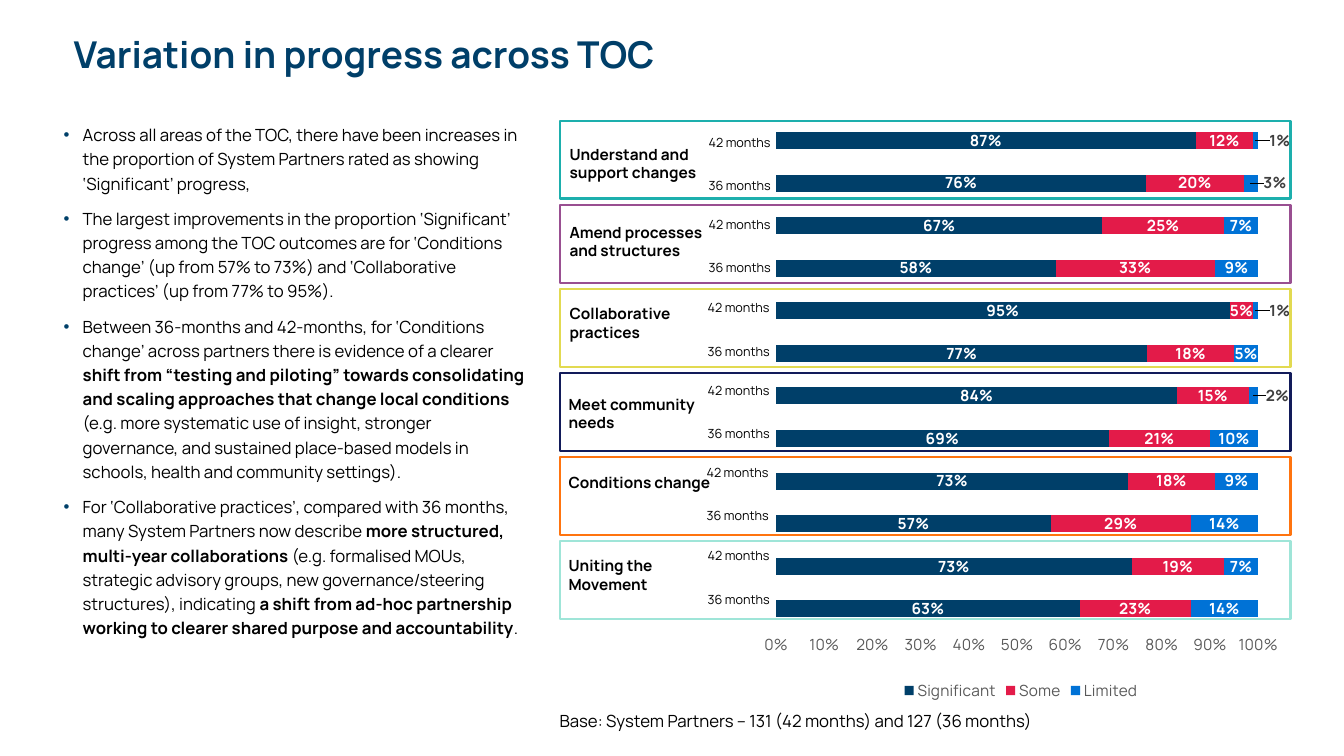
"""Build the slide on variation in progress across the TOC outcomes."""
from dataclasses import dataclass

from lxml import etree
from pptx import Presentation
from pptx import util as u
from pptx.chart.data import CategoryChartData
from pptx.dml.color import RGBColor
from pptx.enum import chart as ch
from pptx.enum import shapes, text
from pptx.oxml.ns import qn


@dataclass(frozen=True)
class Theme:
    """Colours and type sizes of the slide."""
    font: str = "Manrope"
    navy: str = "003F69"
    red: str = "E31B49"
    blue: str = "0072D6"
    bullet: str = "004069"
    black: str = "000000"
    white: str = "FFFFFF"
    axis: str = "595959"
    outside: str = "404040"
    title: float = 26.4
    body: float = 12
    label: float = 11
    month: float = 9


@dataclass(frozen=True)
class Outcome:
    """One framed outcome with its two survey waves."""
    name: str
    colour: str
    left: float
    label_top: float
    month_left: float
    month_top: float
    months_42: tuple[float, float, float]
    months_36: tuple[float, float, float]


THEME = Theme()
OUTCOMES = [
    Outcome("Understand and support changes", "1DAFAD", 5.55, 1.39, 6.93, 1.29,
            (0.87, 0.12, 0.01), (0.76, 0.20, 0.03)),
    Outcome("Amend processes and structures", "994F91", 5.55, 2.16, 6.93, 2.10,
            (0.67, 0.25, 0.07), (0.58, 0.33, 0.09)),
    Outcome("Collaborative practices", "E2DA51", 5.55, 2.97, 6.92, 2.93,
            (0.95, 0.05, 0.01), (0.77, 0.18, 0.05)),
    Outcome("Meet community needs", "121B5A", 5.54, 3.87, 6.92, 3.75,
            (0.84, 0.15, 0.02), (0.69, 0.21, 0.10)),
    Outcome("Conditions change", "FF740F", 5.54, 4.64, 6.91, 4.56,
            (0.73, 0.18, 0.09), (0.57, 0.29, 0.14)),
    Outcome("Uniting the Movement", "9FE5D8", 5.54, 5.47, 6.92, 5.39,
            (0.73, 0.19, 0.07), (0.63, 0.23, 0.14)),
]
RATINGS = {"Significant": THEME.navy, "Some": THEME.red, "Limited": THEME.blue}
FINDINGS = [
    [("Across all areas of the TOC, there have been increases in the proportion of "
      "System Partners rated as showing ‘Significant’ progress,", False)],
    [("The largest improvements in the proportion ‘Significant’ progress among the TOC "
      "outcomes are for ‘Conditions change’ (up from 57% to 73%) and ‘Collaborative "
      "practices’ (up from 77% to 95%).", False)],
    [("Between 36-months and 42-months, for ‘Conditions change’ across partners there is "
      "evidence of a clearer ", False),
     ("shift from “testing and piloting” towards consolidating and scaling approaches "
      "that change local conditions ", True),
     ("(e.g. more systematic use of insight, stronger governance, and sustained "
      "place‑based models in schools, health and community settings).", False)],
    [("For ‘Collaborative practices’, compared with 36 months, many System Partners now "
      "describe ", False),
     ("more structured, multi‑year collaborations ", True),
     ("(e.g. formalised MOUs, strategic advisory groups, new governance/steering "
      "structures), indicating ", False),
     ("a shift from ad‑hoc partnership working to clearer shared purpose and "
      "accountability", True),
     (".", False)],
]


def style(font, size: float, colour: str, bold: bool = False) -> None:
    """Apply the slide font with a size, colour and weight."""
    font.name, font.size, font.bold = THEME.font, u.Pt(size), bold
    font.color.rgb = RGBColor.from_string(colour)


def place(shape, left: float, top: float, width: float, height: float) -> None:
    """Move and size a shape in inches."""
    shape.left, shape.top = u.Inches(left), u.Inches(top)
    shape.width, shape.height = u.Inches(width), u.Inches(height)


def clear_insets(frame) -> None:
    """Remove the inner margins of a text frame."""
    frame.margin_left = frame.margin_right = frame.margin_top = frame.margin_bottom = 0


def add_text(parent, words: str, box: tuple[float, float, float, float], size: float,
             bold: bool = False):
    """Add a wrapping text box and return its frame."""
    frame = parent.add_textbox(*map(u.Inches, box)).text_frame
    frame.word_wrap = True
    frame.auto_size = text.MSO_AUTO_SIZE.SHAPE_TO_FIT_TEXT
    frame.text = words
    style(frame.paragraphs[0].runs[0].font, size, THEME.black, bold)
    return frame


def fill_title(title) -> None:
    """Write and format the slide title."""
    place(title, 0.63, 0.28, 9.4, 0.56)
    frame = title.text_frame
    frame.text = "Variation in progress across TOC"
    frame.auto_size = text.MSO_AUTO_SIZE.NONE
    frame.vertical_anchor = text.MSO_ANCHOR.MIDDLE
    heading = frame.paragraphs[0]
    heading.alignment, heading.line_spacing = text.PP_ALIGN.LEFT, 0.9
    style(heading.runs[0].font, THEME.title, THEME.navy, True)


def fill_findings(body) -> None:
    """Write the bulleted findings."""
    place(body, 0.63, 1.2, 4.61, 5.79)
    frame = body.text_frame
    clear_insets(frame)
    frame.auto_size = text.MSO_AUTO_SIZE.NONE
    for index, pieces in enumerate(FINDINGS):
        finding = frame.paragraphs[0] if index == 0 else frame.add_paragraph()
        props = finding._p.get_or_add_pPr()
        props.set("marL", str(u.Inches(0.19)))
        props.set("indent", str(u.Inches(-0.19)))
        bullet_colour = etree.SubElement(props, qn("a:buClr"))
        etree.SubElement(bullet_colour, qn("a:srgbClr"), val=THEME.bullet)
        etree.SubElement(props, qn("a:buFont"), typeface="Arial")
        etree.SubElement(props, qn("a:buChar"), char="•")
        finding.line_spacing = 1.2
        finding.space_before, finding.space_after = u.Pt(0), u.Pt(8)
        for words, bold in pieces:
            run = finding.add_run()
            run.text = words
            style(run.font, THEME.body, THEME.black, bold)


def add_layout(parent, position: int, **settings) -> None:
    """Insert a manual chart layout at a child position."""
    layout = etree.Element(qn("c:layout"))
    manual = etree.SubElement(layout, qn("c:manualLayout"))
    for tag, value in settings.items():
        etree.SubElement(manual, qn(f"c:{tag}"), val=str(value))
    parent.insert(position, layout)


def add_progress_chart(slide) -> None:
    """Add the stacked bars for all outcomes and waves."""
    waves = [wave for outcome in reversed(OUTCOMES)
             for wave in (outcome.months_36, outcome.months_42)]
    data = CategoryChartData(number_format="0%")
    data.categories = [str(number) for number in range(1, len(waves) + 1)]
    for name, values in zip(RATINGS, zip(*waves)):
        data.add_series(name, values)
    chart = slide.shapes.add_chart(
        ch.XL_CHART_TYPE.BAR_STACKED_100,
        *map(u.Inches, (7.47, 1.07, 5.33, 5.93)), data).chart
    style(chart.font, THEME.label, THEME.black)
    chart.has_title = False
    chart.has_legend = True
    chart.legend.position = ch.XL_LEGEND_POSITION.BOTTOM
    chart.legend.include_in_layout = False
    style(chart.legend.font, THEME.label, THEME.axis)
    chart.category_axis.visible = False
    scale = chart.value_axis
    scale.minimum_scale, scale.maximum_scale, scale.major_unit = 0, 1, 0.1
    scale.has_major_gridlines = False
    scale.major_tick_mark = ch.XL_TICK_MARK.NONE
    scale.format.line.fill.background()
    scale.tick_labels.number_format = "0%"
    scale.tick_labels.number_format_is_linked = False
    style(scale.tick_labels.font, THEME.label, THEME.axis)
    plot = chart.plots[0]
    plot.gap_width, plot.overlap, plot.vary_by_categories = 150, 100, False
    area = chart._chartSpace.chart.plotArea
    for automatic in area.findall(qn("c:layout")):
        area.remove(automatic)
    add_layout(area, 0, layoutTarget="inner", xMode="edge", yMode="edge",
               x=0.043, y=0.019, w=0.9, h=0.855)
    for series, colour in zip(plot.series, RATINGS.values()):
        series.format.fill.solid()
        series.format.fill.fore_color.rgb = RGBColor.from_string(colour)
        labels = series.data_labels
        labels.show_value = True
        labels.number_format, labels.number_format_is_linked = "0%", False
        labels.position = ch.XL_LABEL_POSITION.CENTER
        style(labels.font, THEME.label, THEME.white, True)
    limited = plot.series[-1]
    for index, value in enumerate(limited.values):
        if value < 0.05:
            label = limited.points[index].data_label
            style(label.font, THEME.label, THEME.outside, True)
            label.position = ch.XL_LABEL_POSITION.CENTER
            node = limited._element.xpath(f'.//c:dLbl[c:idx/@val="{index}"]')[0]
            add_layout(node, 1, x=0.045, y=0)


def add_outcome(slide, outcome: Outcome, row: int) -> None:
    """Add the name, wave labels and frame of one outcome."""
    add_text(slide.shapes, outcome.name, (outcome.left, outcome.label_top, 1.61, 0.47),
             THEME.label, True)
    months = slide.shapes.add_group_shape()
    for wave, (words, width) in enumerate((("42 months", 1.01), ("36 months", 0.98))):
        add_text(months.shapes, words,
                 (outcome.month_left, outcome.month_top + 0.43 * wave, width, 0.25),
                 THEME.month)
    border = slide.shapes.add_shape(
        shapes.MSO_SHAPE.RECTANGLE,
        *map(u.Inches, (5.55, 1.2 + 0.834 * row, 7.25, 0.77)))
    border.shadow.inherit = False
    border.fill.background()
    border.line.color.rgb = RGBColor.from_string(outcome.colour)
    border.line.width = u.Pt(1.5)


def main() -> None:
    """Build and save the slide."""
    deck = Presentation()
    deck.slide_width, deck.slide_height = u.Inches(13.33), u.Inches(7.5)
    slide = deck.slides.add_slide(deck.slide_layouts[1])
    fill_title(slide.shapes.title)
    fill_findings(slide.placeholders[1])
    add_progress_chart(slide)
    for row, outcome in enumerate(OUTCOMES):
        add_outcome(slide, outcome, row)
    base = add_text(slide.shapes, "Base: System Partners – 131 (42 months) and 127 (36 months)",
                    (5.55, 7.03, 5.46, 0.21), THEME.body)
    clear_insets(base)
    base.paragraphs[0].line_spacing = 1.1
    deck.save("out.pptx")


if __name__ == "__main__":
    main()
